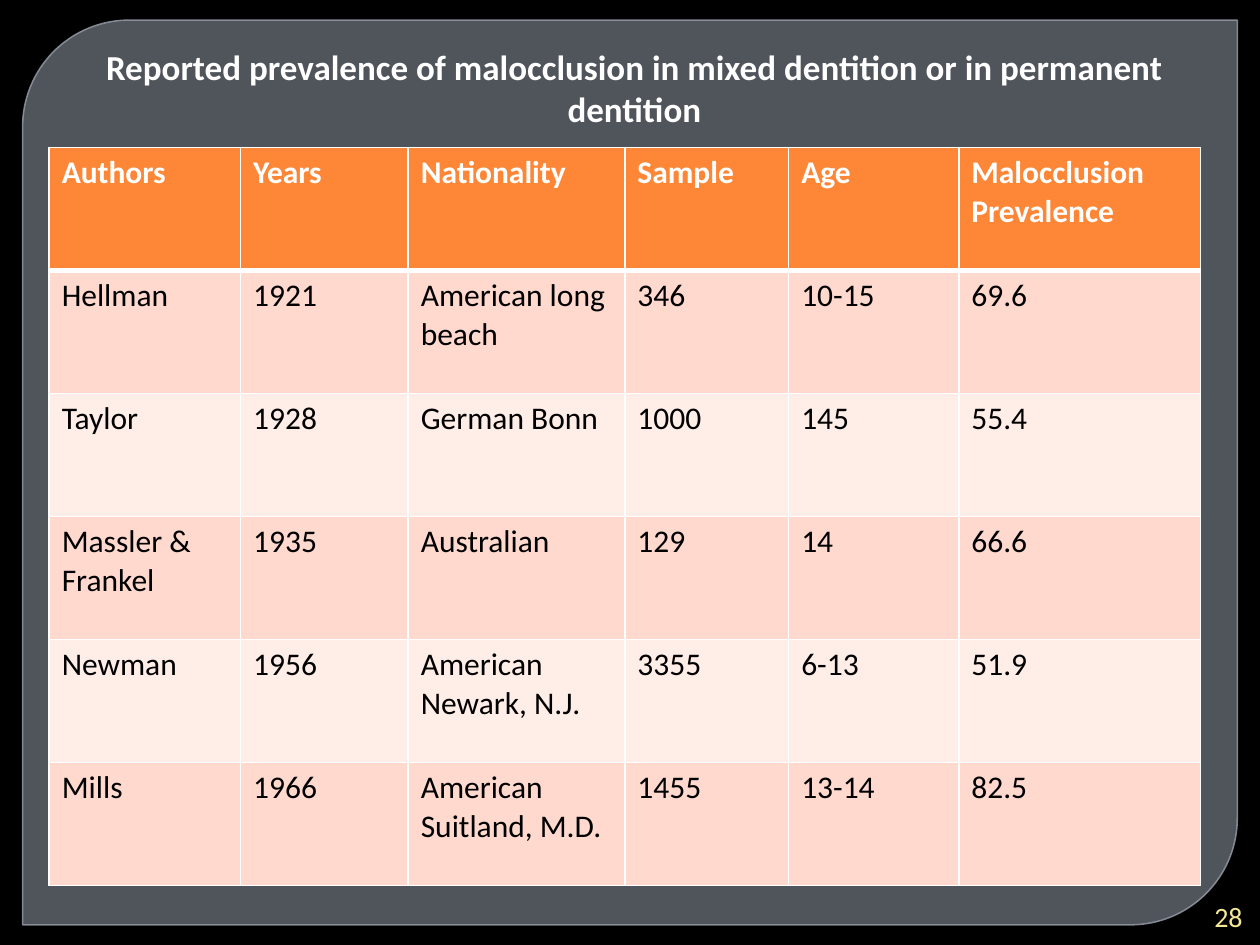
from pptx import Presentation
from pptx.dml.color import RGBColor
from pptx.enum.shapes import MSO_SHAPE
from pptx.enum.text import MSO_ANCHOR, PP_ALIGN
from pptx.oxml.ns import qn
from pptx.util import Inches, Pt
from lxml import etree

PANEL_SHAPE = MSO_SHAPE.ROUND_2_DIAG_RECTANGLE
TOP, MIDDLE = MSO_ANCHOR.TOP, MSO_ANCHOR.MIDDLE
CENTER, RIGHT = PP_ALIGN.CENTER, PP_ALIGN.RIGHT

BLACK = RGBColor(0x00, 0x00, 0x00)
WHITE = RGBColor(0xFF, 0xFF, 0xFF)
PANEL_GRAY = RGBColor(0x7C, 0x82, 0x8D)
OUTLINE_GRAY = RGBColor(0x90, 0x96, 0xA1)
ORANGE = RGBColor(0xFE, 0x86, 0x37)
DARK_BAND = RGBColor(0xFF, 0xD9, 0xCE)
LIGHT_BAND = RGBColor(0xFF, 0xED, 0xE8)
PALE_YELLOW = RGBColor(0xF4, 0xE8, 0x96)

FONT = "Calibri"
TITLE = "Reported prevalence of malocclusion in mixed dentition or in permanent dentition"
COLUMN_WIDTHS = (1.52, 1.33, 1.72, 1.3, 1.35, 1.92)
STUDIES = (
    ("Authors", "Years", "Nationality", "Sample", "Age", "Malocclusion Prevalence"),
    ("Hellman", "1921", "American long beach", "346", "10-15", "69.6"),
    ("Taylor", "1928", "German Bonn", "1000", "145", "55.4"),
    ("Massler & Frankel", "1935", "Australian", "129", "14", "66.6"),
    ("Newman", "1956", "American Newark, N.J.", "3355", "6-13", "51.9"),
    ("Mills", "1966", "American Suitland, M.D.", "1455", "13-14", "82.5"),
)


def format_text(text_frame, size, color, bold=False, alignment=None):
    """Apply one font and alignment to every paragraph."""
    for paragraph in text_frame.paragraphs:
        paragraph.alignment = alignment
        paragraph.font.name = FONT
        paragraph.font.size = Pt(size)
        paragraph.font.bold = bold
        paragraph.font.color.rgb = color


def set_opacity(properties, percent):
    """Make the solid fill of a shape or line partly transparent."""
    color = properties.find(qn("a:solidFill"))[0]
    etree.SubElement(color, qn("a:alpha"), val=str(percent * 1000))


def add_panel(slide, left, top, width, height):
    """Place the translucent panel behind the title."""
    panel = slide.shapes.add_shape(PANEL_SHAPE, left, top, width, height)
    panel.adjustments[0] = 0.118
    panel.adjustments[1] = 0
    panel.shadow.inherit = False
    panel.fill.solid()
    panel.fill.fore_color.rgb = PANEL_GRAY
    panel.line.color.rgb = OUTLINE_GRAY
    panel.line.width = Pt(0.87)
    properties = panel.element.spPr
    set_opacity(properties, 65)
    set_opacity(properties.find(qn("a:ln")), 88)
    slide.shapes.title.element.addprevious(panel.element)


def add_title(slide, left, top, width, height):
    """Fill and position the title placeholder."""
    title = slide.shapes.title
    title.left, title.top, title.width, title.height = left, top, width, height
    title.text_frame.text = TITLE
    title.text_frame.word_wrap = True
    title.text_frame.vertical_anchor = TOP
    format_text(title.text_frame, 20, WHITE, True, CENTER)


def add_borders(cell, bottom_width, top_width):
    """Draw white borders around a cell."""
    properties = cell._tc.get_or_add_tcPr()
    widths = {"a:lnL": 1, "a:lnR": 1, "a:lnT": top_width, "a:lnB": bottom_width}
    for side, width in widths.items():
        line = etree.SubElement(properties, qn(side), w=str(Pt(width)))
        fill = etree.SubElement(line, qn("a:solidFill"))
        etree.SubElement(fill, qn("a:srgbClr"), val=str(WHITE))


def add_study_table(slide, left, top, width, height):
    """Build the table of studies with a header and alternating bands."""
    frame = slide.shapes.add_table(
        len(STUDIES), len(COLUMN_WIDTHS), left, top, width, height)
    table = frame.table
    for column, column_width in zip(table.columns, COLUMN_WIDTHS):
        column.width = Inches(column_width)
    for row_index, study in enumerate(STUDIES):
        is_header = row_index == 0
        band = DARK_BAND if row_index % 2 else LIGHT_BAND
        for column_index, text in enumerate(study):
            cell = table.cell(row_index, column_index)
            cell.text = text
            add_borders(cell, 3 if is_header else 1, 3 if row_index == 1 else 1)
            cell.fill.solid()
            cell.fill.fore_color.rgb = ORANGE if is_header else band
            format_text(cell.text_frame, 18, WHITE if is_header else BLACK, is_header)


def add_page_number(slide, left, top, width, height):
    """Write the page number in the bottom corner."""
    text_frame = slide.shapes.add_textbox(left, top, width, height).text_frame
    text_frame.word_wrap = True
    text_frame.vertical_anchor = MIDDLE
    text_frame.text = "28"
    format_text(text_frame, 16, PALE_YELLOW, alignment=RIGHT)


def main():
    """Build and save the presentation."""
    presentation = Presentation()
    presentation.slide_width = Inches(10)
    presentation.slide_height = Inches(7.5)
    slide = presentation.slides.add_slide(presentation.slide_layouts[5])
    slide.background.fill.solid()
    slide.background.fill.fore_color.rgb = BLACK
    add_panel(slide, Inches(0.18), Inches(0.16), Inches(9.64), Inches(7.18))
    add_title(slide, Inches(0.7), Inches(0.31), Inches(8.67), Inches(0.77))
    add_study_table(slide, Inches(0.39), Inches(1.17), Inches(9.14), Inches(5.86))
    add_page_number(slide, Inches(9.45), Inches(7.12), Inches(0.51), Inches(0.3))
    presentation.save("out.pptx")


if __name__ == "__main__":
    main()
